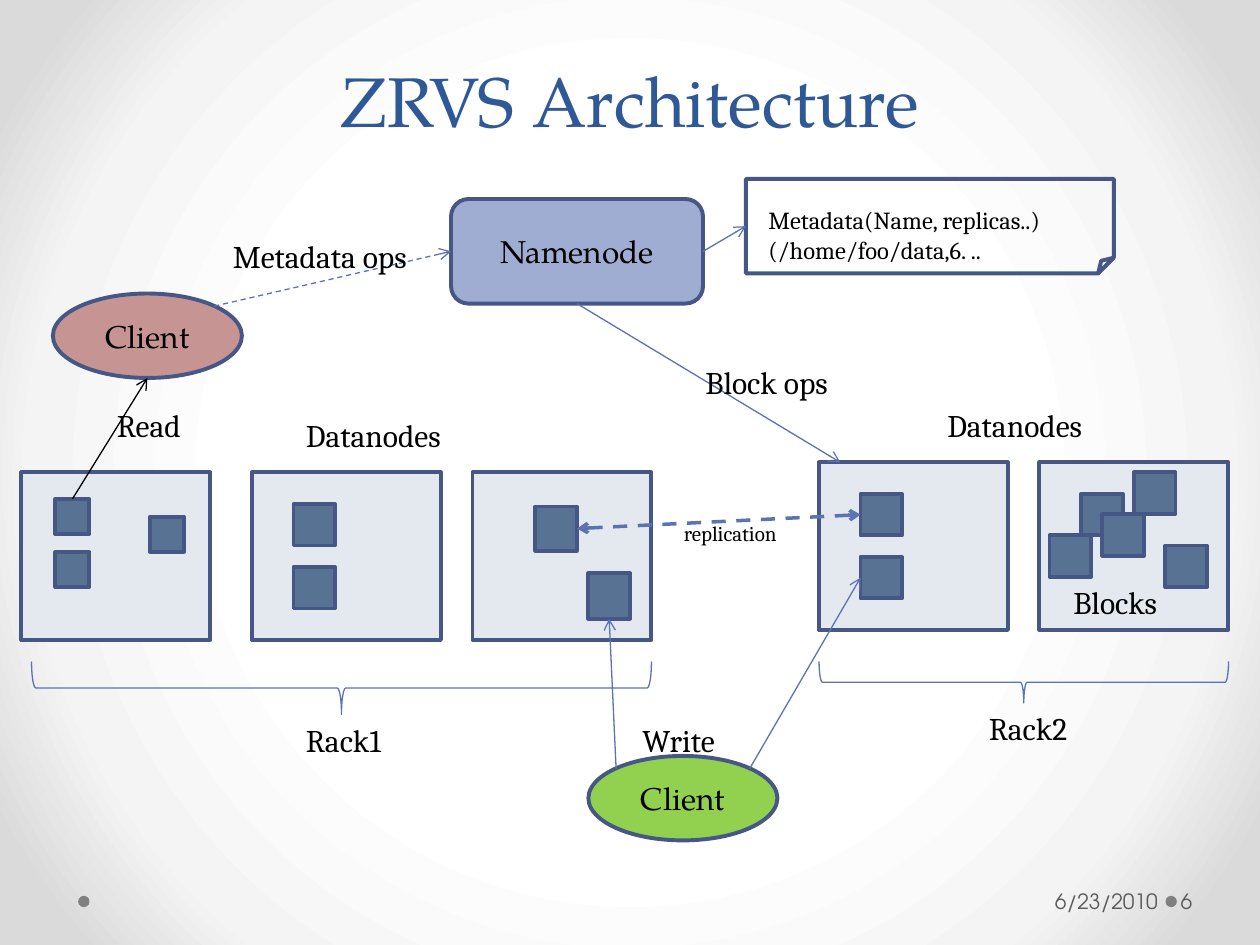
from lxml import etree
from pptx import Presentation
from pptx.dml.color import RGBColor
from pptx.enum import dml, shapes, text
from pptx.oxml import parse_xml
from pptx.oxml.ns import nsdecls, qn
from pptx.util import Inches, Pt

NAVY = RGBColor(0x47, 0x57, 0x85)
BLUE = RGBColor(0x5C, 0x72, 0xB2)
TITLE_BLUE = RGBColor(0x2F, 0x58, 0x97)
PERIWINKLE = RGBColor(0xA0, 0xAD, 0xD2)
NODE_FILL = RGBColor(0xE4, 0xE9, 0xEF)
BLOCK_FILL = RGBColor(0x57, 0x72, 0x93)
ROSE = RGBColor(0xC7, 0x94, 0x94)
GREEN = RGBColor(0x92, 0xD0, 0x50)
GRAY = RGBColor(0x80, 0x80, 0x80)
FOOTER_GRAY = RGBColor(0x59, 0x59, 0x59)
BLACK = RGBColor(0, 0, 0)

HEADING_FONT = "TeX Gyre Pagella"
LABEL_FONT = "Cambria"
FOOTER_FONT = "TeX Gyre Adventor"

BACKGROUND_STOPS = ((50, "FFFFFF"), (76, "F4F4F4"), (92, "DADADA"))
SHAPE = shapes.MSO_SHAPE
ALIGN = text.PP_ALIGN
ANCHOR = text.MSO_ANCHOR

# Each datanode: its box, then its blocks
DATANODES = {
    "rack1_a": ((0.17, 3.75, 1.5, 1.33),
                [(0.44, 3.96, 0.27, 0.28), (0.44, 4.38, 0.27, 0.28), (1.19, 4.1, 0.27, 0.28)]),
    "rack1_b": ((2, 3.75, 1.5, 1.33),
                [(2.33, 4, 0.33, 0.33), (2.33, 4.5, 0.33, 0.33)]),
    "rack1_c": ((3.75, 3.75, 1.42, 1.33),
                [(4.25, 4.02, 0.33, 0.35), (4.67, 4.55, 0.33, 0.36)]),
    "rack2_a": ((6.5, 3.67, 1.5, 1.33),
                [(6.83, 3.92, 0.33, 0.33), (6.83, 4.42, 0.33, 0.33)]),
    "rack2_b": ((8.25, 3.67, 1.5, 1.33),
                [(x, y, 0.33, 0.33) for x, y in
                 ((8.58, 3.92), (8.33, 4.25), (8.75, 4.08), (9.25, 4.33), (9, 3.75))]),
}

# Text, box, size
LABELS = (
    ("replication", (5.33, 4.08, 1, 0.3), 12),
    ("Rack1", (2.33, 5.67, 0.86, 0.4), 18),
    ("Rack2", (7.75, 5.58, 0.9, 0.4), 18),
    ("Blocks", (8.42, 4.58, 0.93, 0.4), 18),
    ("Datanodes", (2.33, 3.25, 1.4, 0.4), 18),
    ("Datanodes", (7.42, 3.17, 1.4, 0.4), 18),
    ("Write", (5, 5.67, 0.84, 0.4), 18),
    ("Read", (0.83, 3.17, 0.78, 0.4), 18),
    ("Metadata ops", (1.75, 1.83, 1.72, 0.4), 18),
    ("Metadata(Name, replicas..)\n(/home/foo/data,6. ..", (6, 1.58, 2.56, 0.57), 14),
    ("Block ops", (5.5, 2.83, 1.27, 0.4), 18),
)


def set_background(slide):
    slide.background.fill.solid()
    solid = slide.element.find(".//" + qn("p:bgPr")).find(qn("a:solidFill"))
    stops = "".join(f'<a:gs pos="{position * 1000}"><a:srgbClr val="{color}"/></a:gs>'
                    for position, color in BACKGROUND_STOPS)
    gradient = parse_xml(
        f'<a:gradFill {nsdecls("a")} rotWithShape="1"><a:gsLst>{stops}</a:gsLst>'
        '<a:path path="circle"><a:fillToRect l="50000" t="50000" r="50000" b="50000"/>'
        '</a:path></a:gradFill>')
    solid.getparent().replace(solid, gradient)


def write_text(frame, content, size, font, color, align):
    for index, line in enumerate(content.split("\n")):
        paragraph = frame.paragraphs[0] if index == 0 else frame.add_paragraph()
        paragraph.alignment = align
        run = paragraph.add_run()
        run.text = line
        run.font.size = Pt(size)
        run.font.name = font
        run.font.color.rgb = color


def add_shape(slide, kind, box, fill=None, line=NAVY, width=2.25, caption=None):
    shape = slide.shapes.add_shape(kind, *map(Inches, box))
    shape.shadow.inherit = False
    if fill is None:
        shape.fill.background()
    else:
        shape.fill.solid()
        shape.fill.fore_color.rgb = fill
    if line is None:
        shape.line.fill.background()
    else:
        shape.line.color.rgb = line
        shape.line.width = Pt(width)
    if caption:
        shape.text_frame.vertical_anchor = ANCHOR.MIDDLE
        write_text(shape.text_frame, caption, 18, HEADING_FONT, BLACK, ALIGN.CENTER)
    return shape


def add_datanode(slide, box, blocks):
    add_shape(slide, SHAPE.RECTANGLE, box, NODE_FILL)
    return [add_shape(slide, SHAPE.RECTANGLE, block, BLOCK_FILL) for block in blocks]


def add_brace(slide, box):
    brace = add_shape(slide, SHAPE.RIGHT_BRACE, box, line=BLUE, width=0.75)
    brace.rotation = 90
    brace.adjustments[0] = 0.08
    brace.adjustments[1] = 0.5


def add_text(slide, content, box, size, font=LABEL_FONT, color=BLACK,
             align=ALIGN.LEFT, anchor=ANCHOR.TOP, wrap=True):
    frame = slide.shapes.add_textbox(*map(Inches, box)).text_frame
    frame.word_wrap = wrap
    frame.vertical_anchor = anchor
    if not wrap:
        frame.auto_size = text.MSO_AUTO_SIZE.SHAPE_TO_FIT_TEXT
    write_text(frame, content, size, font, color, align)
    return frame


def add_arrow(slide, start, end, color=BLUE, width=0.75, dashed=False, both=False):
    """Each end is either an (x, y) point or a (shape, connection site) pair."""
    joined = [not isinstance(place[0], (int, float)) for place in (start, end)]
    points = [(0, 0) if is_joined else place for is_joined, place in zip(joined, (start, end))]
    connector = slide.shapes.add_connector(
        shapes.MSO_CONNECTOR.STRAIGHT, *(Inches(value) for point in points for value in point))
    if joined[0]:
        connector.begin_connect(*start)
    if joined[1]:
        connector.end_connect(*end)
    connector.line.color.rgb = color
    connector.line.width = Pt(width)
    if dashed:
        connector.line.dash_style = dml.MSO_LINE.DASH
    line = connector.line._get_or_add_ln()
    for tag in ("a:headEnd", "a:tailEnd") if both else ("a:tailEnd",):
        etree.SubElement(line, qn(tag), type="arrow")
    etree.SubElement(connector.element.spPr, qn("a:effectLst"))


def add_footer(slide):
    for left in (0.62, 9.25):
        add_shape(slide, SHAPE.OVAL, (left, 7.11, 0.09, 0.09), GRAY, line=None)
    for content, box, inset, align in (
            ("6/23/2010", (6.96, 6.95, 2.28, 0.4), 0.1, ALIGN.RIGHT),
            ("6", (9.34, 6.95, 0.61, 0.4), 0.03, ALIGN.LEFT)):
        frame = add_text(slide, content, box, 12, FOOTER_FONT, FOOTER_GRAY, align, ANCHOR.MIDDLE)
        frame.margin_left = Inches(inset)
        frame.margin_right = Inches(0.05)


def main():
    presentation = Presentation()
    presentation.slide_width, presentation.slide_height = Inches(10), Inches(7.5)
    slide = presentation.slides.add_slide(presentation.slide_layouts[6])
    set_background(slide)
    add_footer(slide)

    # Title
    title = add_text(slide, "ZRVS Architecture", (0.5, 0, 9, 1.17), 40, HEADING_FONT,
                     TITLE_BLUE, ALIGN.CENTER, ANCHOR.BOTTOM)
    title.paragraphs[0].line_spacing = Pt(58)

    # Namenode, metadata note and clients
    namenode = add_shape(slide, SHAPE.ROUNDED_RECTANGLE, (3.58, 1.58, 2, 0.83),
                         PERIWINKLE, caption="Namenode")
    note = add_shape(slide, SHAPE.FOLDED_CORNER, (5.92, 1.42, 2.92, 0.75))
    add_shape(slide, SHAPE.OVAL, (0.42, 2.33, 1.5, 0.67), ROSE, caption="Client")
    add_shape(slide, SHAPE.OVAL, (4.67, 6, 1.5, 0.67), GREEN, caption="Client")

    # Datanodes with their blocks, and rack braces
    blocks = {name: add_datanode(slide, *parts) for name, parts in DATANODES.items()}
    add_brace(slide, (2.5, 3, 0.42, 4.92))
    add_brace(slide, (7.96, 3.79, 0.33, 3.25))

    # Arrows
    source, written = blocks["rack1_c"]
    replica, rewritten = blocks["rack2_a"]
    add_arrow(slide, (source, 3), (replica, 1), width=2, dashed=True, both=True)
    add_arrow(slide, (4.89, 6.1), (written, 2))
    add_arrow(slide, (5.95, 6.1), (rewritten, 1))
    add_arrow(slide, (blocks["rack1_a"][0], 0), (1.17, 3), color=BLACK)
    add_arrow(slide, (1.7, 2.43), (namenode, 1), dashed=True)
    add_arrow(slide, (namenode, 3), (note, 1))
    add_arrow(slide, (namenode, 2), (6.67, 3.67))

    # Labels
    for content, box, size in LABELS:
        add_text(slide, content, box, size, wrap=False)

    presentation.save("out.pptx")


if __name__ == "__main__":
    main()
